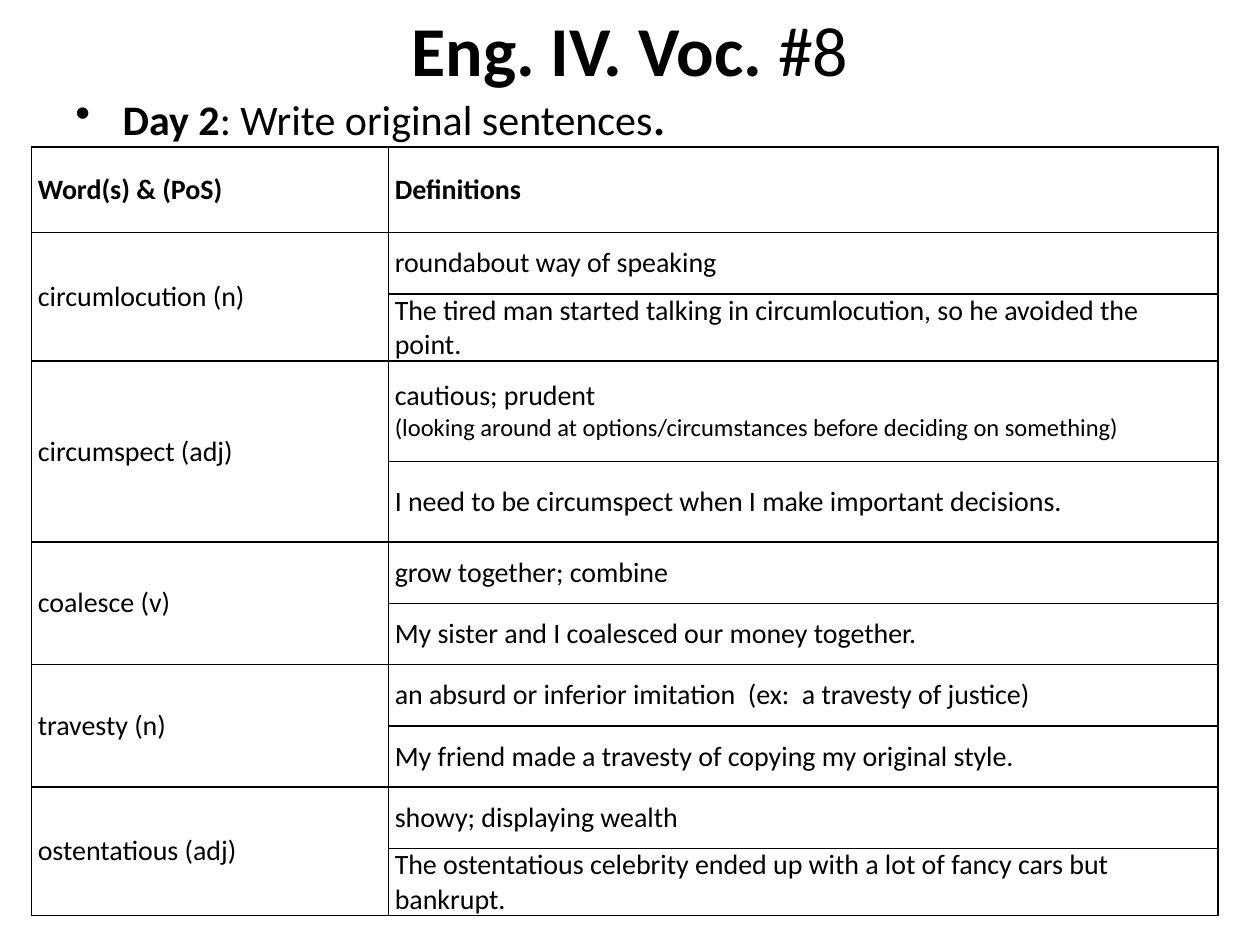
from lxml import etree
from pptx import Presentation
from pptx.dml.color import RGBColor
from pptx.enum.text import MSO_ANCHOR, PP_ALIGN
from pptx.oxml.ns import qn
from pptx.util import Pt

MIDDLE, TOP = MSO_ANCHOR.MIDDLE, MSO_ANCHOR.TOP
CENTER, LEFT = PP_ALIGN.CENTER, PP_ALIGN.LEFT
COLORS = {"text": "000000", "line": "000000", "cell": "FFFFFF"}
FONT = "Calibri"

COL_WIDTHS = [204, 474]
HEADER = ["Word(s) & (PoS)", "Definitions"]
HEADER_HEIGHT = 49
ENTRIES = [
    ("circumlocution (n)", ["roundabout way of speaking"],
     "The tired man started talking in circumlocution, so he avoided the point.", (35, 35)),
    ("circumspect (adj)",
     ["cautious; prudent",
      "(looking around at options/circumstances before deciding on something)"],
     "I need to be circumspect when I make important decisions.", (57.3, 46.2)),
    ("coalesce (v)", ["grow together; combine"],
     "My sister and I coalesced our money together.", (35, 35)),
    ("travesty (n)", ["an absurd or inferior imitation  (ex:  a travesty of justice)"],
     "My friend made a travesty of copying my original style.", (35, 35)),
    ("ostentatious (adj)", ["showy; displaying wealth"],
     "The ostentatious celebrity ended up with a lot of fancy cars but bankrupt.", (35, 35)),
]


def set_attrs(obj, values):
    """Set every attribute in a dict of format values."""
    for name, value in values.items():
        setattr(obj, name, value)


def add_run(p, text, size, bold=False):
    """Add one formatted run to a paragraph."""
    r = p.add_run()
    r.text = text
    set_attrs(r.font, {"name": FONT, "size": Pt(size), "bold": bold})
    r.font.color.rgb = RGBColor.from_string(COLORS["text"])


def place(sp, box):
    """Move a shape to a box given in points."""
    set_attrs(sp, dict(zip(("left", "top", "width", "height"), map(Pt, box))))


def add_title(s, box):
    """Fill the title placeholder."""
    sp = s.shapes.title
    place(sp, box)
    tf = sp.text_frame
    set_attrs(tf, {"vertical_anchor": MIDDLE, "word_wrap": True})
    p = tf.paragraphs[0]
    p.alignment = CENTER
    add_run(p, "Eng. IV. Voc. ", 40, True)
    add_run(p, "#8", 40)


def add_task(s, box):
    """Add the bulleted task line."""
    tf = s.shapes.add_textbox(*map(Pt, box)).text_frame
    set_attrs(tf, {"vertical_anchor": TOP, "word_wrap": True})
    p = tf.paragraphs[0]
    set_attrs(p, {"alignment": LEFT, "space_before": Pt(2)})
    pPr = p._p.get_or_add_pPr()
    pPr.set("marL", str(Pt(27)))
    pPr.set("indent", str(Pt(-27)))
    etree.SubElement(pPr, qn("a:buFont"), typeface="Arial")
    etree.SubElement(pPr, qn("a:buChar"), char="•")
    add_run(p, "Day 2", 24, True)
    add_run(p, ": Write original sentences", 24)
    add_run(p, ".", 32)


def format_cell(cell):
    """Give a cell its margins, borders and fill."""
    set_attrs(cell, {"vertical_anchor": MIDDLE, "margin_left": Pt(3.6), "margin_right": Pt(3.6),
                     "margin_top": 0, "margin_bottom": 0})
    tcPr = cell._tc.get_or_add_tcPr()
    for side in ("lnL", "lnR", "lnT", "lnB"):
        ln = etree.SubElement(tcPr, qn("a:" + side), w=str(Pt(1)))
        fill = etree.SubElement(ln, qn("a:solidFill"))
        etree.SubElement(fill, qn("a:srgbClr"), val=COLORS["line"])
    cell.fill.solid()
    cell.fill.fore_color.rgb = RGBColor.from_string(COLORS["cell"])


def write_cell(cell, lines, bold=False):
    """Write the main line and any smaller note below it."""
    tf = cell.text_frame
    for i, line in enumerate(lines):
        p = tf.add_paragraph() if i else tf.paragraphs[0]
        add_run(p, line, 14 if i else 16, bold)


def add_vocabulary(s, box):
    """Add the table with two rows for each word."""
    heights = [HEADER_HEIGHT] + [h for entry in ENTRIES for h in entry[3]]
    table = s.shapes.add_table(len(heights), len(COL_WIDTHS), *map(Pt, box)).table
    set_attrs(table, {"first_row": False, "horz_banding": False})
    for col, width in zip(table.columns, COL_WIDTHS):
        col.width = Pt(width)
    for row, height in zip(table.rows, heights):
        row.height = Pt(height)
    for cell in table.iter_cells():
        format_cell(cell)
    for c, text in enumerate(HEADER):
        write_cell(table.cell(0, c), [text], True)
    for i, (word, definition, sentence, _) in enumerate(ENTRIES):
        top = 1 + 2 * i
        table.cell(top, 0).merge(table.cell(top + 1, 0))
        write_cell(table.cell(top, 0), [word])
        write_cell(table.cell(top, 1), definition)
        write_cell(table.cell(top + 1, 1), [sentence])


def main():
    """Build the vocabulary slide."""
    prs = Presentation()
    set_attrs(prs, {"slide_width": Pt(720), "slide_height": Pt(540)})
    s = prs.slides.add_slide(prs.slide_layouts[5])
    add_title(s, (36, 0, 648, 56))
    add_task(s, (36, 42, 648, 42))
    add_vocabulary(s, (18, 84, sum(COL_WIDTHS), 439))
    prs.save("out.pptx")


if __name__ == "__main__":
    main()
